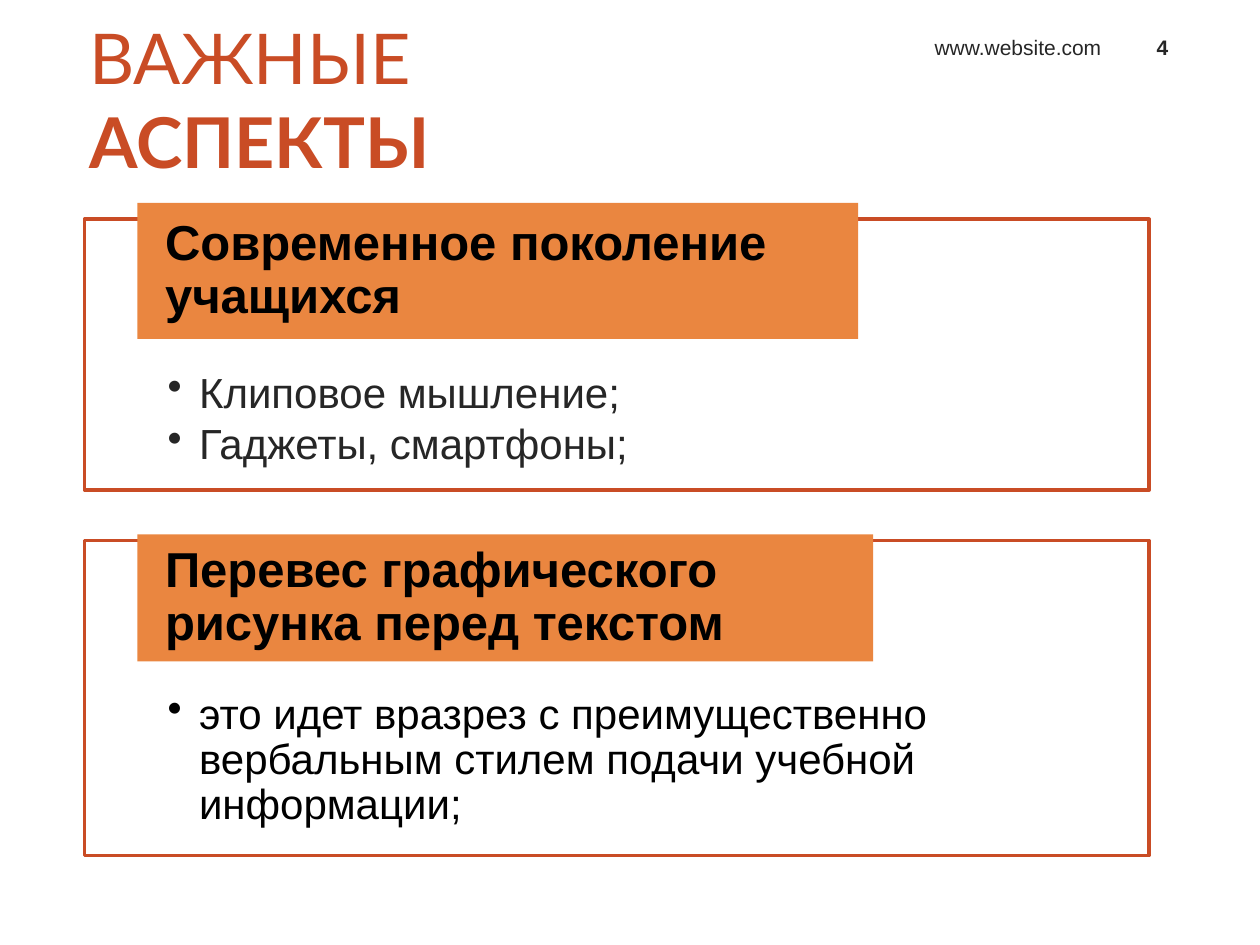
from lxml.etree import SubElement
from pptx import Presentation
from pptx.dml.color import RGBColor as RGB
from pptx.enum.shapes import MSO_SHAPE as Preset
from pptx.enum.text import MSO_ANCHOR as Anchor, PP_ALIGN as Align
from pptx.oxml.ns import qn
from pptx.util import Inches, Pt

COLORS = {"accent": "C94C25", "banner": "EA8640", "black": "000000", "gray": "262626"}
COLUMNS, ROWS = 100, 75

deck = Presentation()
deck.slide_width, deck.slide_height = Inches(10), Inches(7.5)
slide = deck.slides.add_slide(deck.slide_layouts[6])
column, row = deck.slide_width / COLUMNS, deck.slide_height / ROWS


def add_box(left, top, width, height, insets, anchor, preset=None):
    place = [int(left * column), int(top * row), int(width * column), int(height * row)]
    if preset is None:
        box = slide.shapes.add_textbox(*place)
    else:
        box = slide.shapes.add_shape(preset, *place)
        box.shadow.inherit = False
    frame = box.text_frame
    frame.word_wrap = True
    frame.vertical_anchor = anchor
    frame.margin_left = frame.margin_right = int(insets[0] * column)
    frame.margin_top, frame.margin_bottom = int(insets[1] * row), int(insets[2] * row)
    return box


def add_run(paragraph, text, size, color, bold=False, face="Arial"):
    run = paragraph.add_run()
    run.text = text
    run.font.name, run.font.size, run.font.bold = face, Pt(size), bold
    run.font.color.rgb = RGB.from_string(COLORS[color])


title = add_box(5.1, -0.1, 50.7, 15.8, (0, 0.5, 0.5), Anchor.MIDDLE)
title_line = title.text_frame.paragraphs[0]
title_line._p.get_or_add_pPr().set("marL", str(Inches(0.2)))
add_run(title_line, "ВАЖНЫЕ", 40, "accent", face="Lato")
add_run(title_line, " АСПЕКТЫ", 40, "accent", bold=True, face="Lato")

sections = [
    ("Современное поколение учащихся", (16.1, 57.2, 10.8),
     ["Клиповое мышление;", "Гаджеты, смартфоны;"], (17.4, 21.5), "gray"),
    ("Перевес графического рисунка перед текстом", (42.4, 58.4, 10.1),
     ["это идет вразрез с преимущественно вербальным стилем подачи учебной информации;"],
     (42.9, 25), "black"),
]
for heading, (banner_top, banner_width, banner_height), points, (top, height), color in sections:
    panel = add_box(6.7, top, 84.5, height, (6.6, 12.1, 1.9), Anchor.TOP, Preset.RECTANGLE)
    panel.fill.background()
    panel.line.color.rgb = RGB.from_string(COLORS["accent"])
    panel.line.width = Pt(2)
    for index, point in enumerate(points):
        frame = panel.text_frame
        item = frame.add_paragraph() if index else frame.paragraphs[0]
        item.alignment, item.line_spacing, item.space_after = Align.LEFT, 0.9, Pt(3.6)
        properties = item._p.get_or_add_pPr()
        properties.set("marL", str(Inches(0.25)))
        properties.set("indent", str(-Inches(0.25)))
        SubElement(properties, qn("a:buChar")).set("char", "•")
        add_run(item, point, 24, color)

    banner = add_box(10.9, banner_top, banner_width, banner_height, (2.2, 0, 0),
                     Anchor.MIDDLE, Preset.RECTANGLE)
    banner.fill.solid()
    banner.fill.fore_color.rgb = RGB.from_string(COLORS["banner"])
    banner.line.fill.background()
    label = banner.text_frame.paragraphs[0]
    label.alignment, label.line_spacing, label.space_after = Align.LEFT, 0.9, Pt(9.8)
    add_run(label, heading, 28, "black", bold=True)

for text, left, width, alignment, bold in [
    ("www.website.com", 64.2, 24.2, Align.RIGHT, False),
    ("4", 89.5, 5.5, Align.CENTER, True),
]:
    header = add_box(left, 1.9, width, 3.3, (1, 0.5, 0.5), Anchor.BOTTOM)
    header_line = header.text_frame.paragraphs[0]
    header_line.alignment = alignment
    add_run(header_line, text, 12, "gray", bold)

deck.save("out.pptx")
